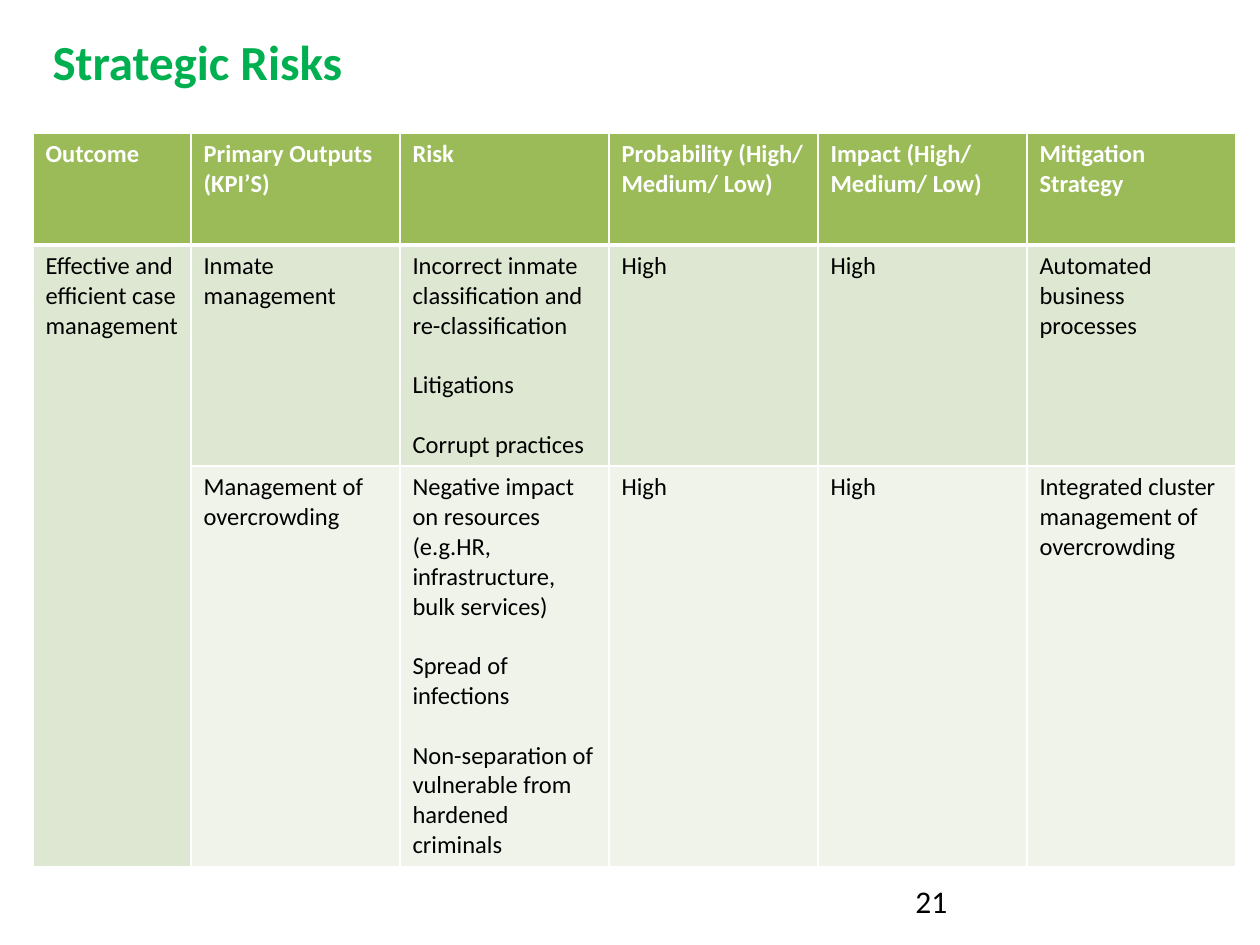
"""Build the Strategic Risks slide with its risk table."""
import dataclasses

import lxml.etree
import pptx
import pptx.dml.color
import pptx.enum.text
import pptx.oxml.ns
import pptx.util


@dataclasses.dataclass(frozen=True)
class Theme:
    font: str = "Calibri"
    title: str = "00B050"
    header: str = "9BBB59"
    bands: tuple = ("DEE7D1", "EFF3EA")
    light: str = "FFFFFF"
    dark: str = "000000"
    title_size: int = 28
    table_size: int = 14
    number_size: int = 18
    gap: int = 17


theme = Theme()
PX = 914400 / 126


def px(length):
    return pptx.util.Emu(round(length * PX))


def style(para, size, colour, bold=False):
    para.font.name = theme.font
    para.font.size = pptx.util.Pt(size)
    para.font.bold = bold
    para.font.color.rgb = pptx.dml.color.RGBColor.from_string(colour)


deck = pptx.Presentation()
deck.slide_width, deck.slide_height = px(1260), px(945)
page = deck.slides.add_slide(deck.slide_layouts[5])

title = page.shapes.title
title.left, title.top, title.width, title.height = px(40), px(25), px(1191), px(72)
title.text_frame.text = "Strategic Risks"
title.text_frame.vertical_anchor = pptx.enum.text.MSO_ANCHOR.TOP
title.text_frame.auto_size = pptx.enum.text.MSO_AUTO_SIZE.NONE
title_para = title.text_frame.paragraphs[0]
title_para.alignment = pptx.enum.text.PP_ALIGN.LEFT
style(title_para, theme.title_size, theme.title, True)

rows = [
    ["Outcome", "Primary Outputs (KPI’S)", "Risk", "Probability (High/ Medium/ Low)",
     "Impact (High/ Medium/ Low)", "Mitigation Strategy"],
    ["Effective and efficient case management", "Inmate management",
     "Incorrect inmate classification and re-classification\nLitigations\nCorrupt practices",
     "High", "High", "Automated business processes"],
    ["", "Management of overcrowding",
     "Negative impact on resources (e.g.HR, infrastructure, bulk services)\n"
     "Spread of infections\nNon-separation of vulnerable from hardened criminals",
     "High", "High", "Integrated cluster management of overcrowding"],
]
widths = [158] + [209] * 5
heights = [112, 219, 395]
fills = [theme.header, *theme.bands]

table = page.shapes.add_table(
    len(rows), len(widths), px(33), px(133), px(sum(widths)), px(sum(heights))).table
for column, width in zip(table.columns, widths):
    column.width = px(width)

for row_index, (texts, height, fill) in enumerate(zip(rows, heights, fills)):
    table.rows[row_index].height = px(height)
    is_header = row_index == 0
    for column_index, text in enumerate(texts):
        cell = table.cell(row_index, column_index)
        cell.text = text
        for para_index, para in enumerate(cell.text_frame.paragraphs):
            style(para, theme.table_size, theme.light if is_header else theme.dark, is_header)
            if para_index:
                para.space_before = pptx.util.Pt(theme.gap)
        cell.fill.solid()
        cell.fill.fore_color.rgb = pptx.dml.color.RGBColor.from_string(fill)
        properties = cell._tc.get_or_add_tcPr()
        line_widths = {"L": 1, "R": 1, "T": 3 if row_index == 1 else 1, "B": 3 if is_header else 1}
        for position, (side, points) in enumerate(line_widths.items()):
            border = lxml.etree.Element(
                pptx.oxml.ns.qn(f"a:ln{side}"), w=str(pptx.util.Pt(points)))
            solid = lxml.etree.SubElement(border, pptx.oxml.ns.qn("a:solidFill"))
            lxml.etree.SubElement(solid, pptx.oxml.ns.qn("a:srgbClr"), val=theme.light)
            properties.insert(position, border)

table.cell(1, 0).merge(table.cell(2, 0))

number_box = page.shapes.add_textbox(px(903), px(876), px(294), px(50))
number_box.text_frame.word_wrap = True
number_box.text_frame.text = "21"
style(number_box.text_frame.paragraphs[0], theme.number_size, theme.dark)

deck.save("out.pptx")
